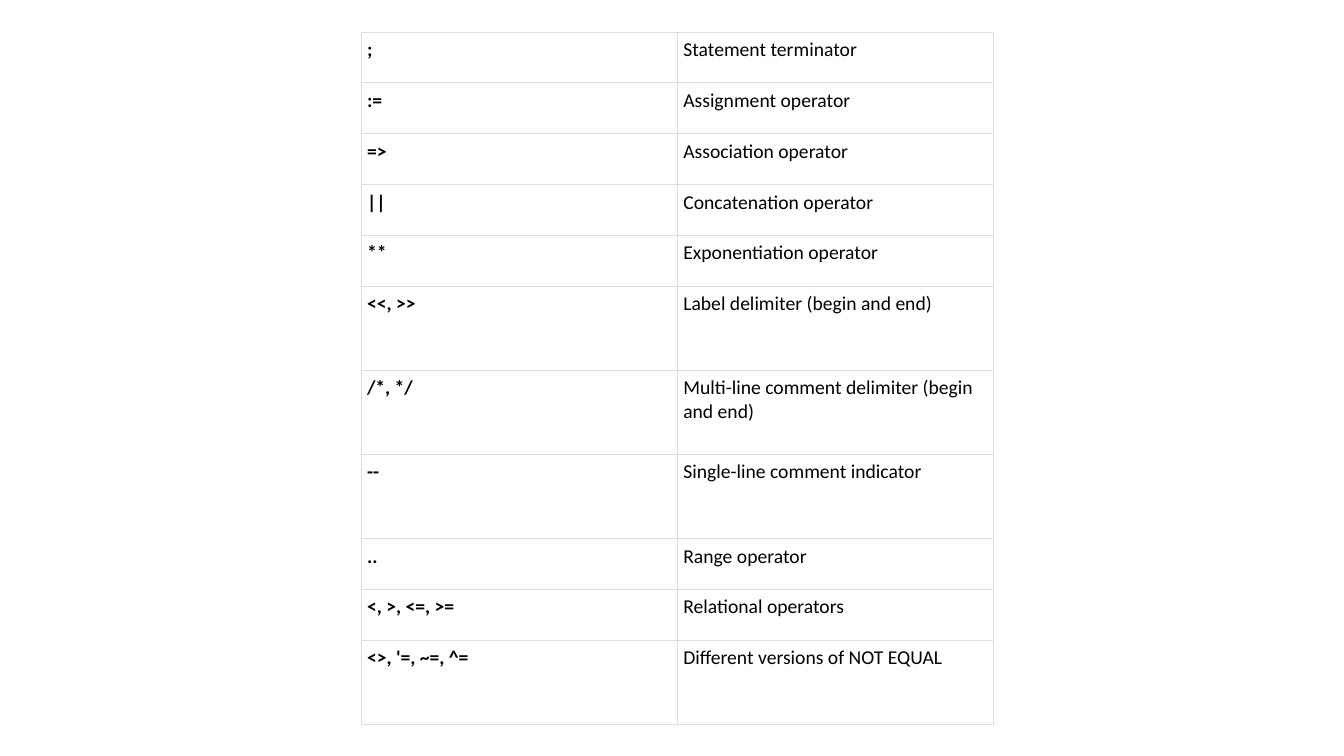
import pptx
import pptx.dml.color
import pptx.oxml
import pptx.oxml.ns
import pptx.util
from pptx.util import Cm

BLACK = pptx.dml.color.RGBColor(0x00, 0x00, 0x00)
WHITE = pptx.dml.color.RGBColor(0xFF, 0xFF, 0xFF)
BORDER_GRAY = pptx.dml.color.RGBColor(0xDD, 0xDD, 0xDD)

SHORT_ROW = Cm(1.28)
TALL_ROW = Cm(2.12)
CELL_MARGIN = Cm(0.15)

OPERATORS = [
    (";", "Statement terminator", SHORT_ROW),
    (":=", "Assignment operator", SHORT_ROW),
    ("=>", "Association operator", SHORT_ROW),
    ("||", "Concatenation operator", SHORT_ROW),
    ("**", "Exponentiation operator", SHORT_ROW),
    ("<<, >>", "Label delimiter (begin and end)", TALL_ROW),
    ("/*, */", "Multi-line comment delimiter (begin and end)", TALL_ROW),
    ("--", "Single-line comment indicator", TALL_ROW),
    ("..", "Range operator", SHORT_ROW),
    ("<, >, <=, >=", "Relational operators", SHORT_ROW),
    ("<>, '=, ~=, ^=", "Different versions of NOT EQUAL", TALL_ROW),
]


def write_text(text_frame, text, size=14, bold=False, color=BLACK, font="Calibri"):
    run = text_frame.paragraphs[0].add_run()
    run.text = text
    run.font.size = pptx.util.Pt(size)
    run.font.bold = bold
    run.font.color.rgb = color
    run.font.name = font


def set_borders(cell, color, width):
    properties = cell._tc.get_or_add_tcPr()
    for position, side in enumerate(("lnL", "lnR", "lnT", "lnB")):
        line = pptx.oxml.parse_xml(
            f'<a:{side} {pptx.oxml.ns.nsdecls("a")} w="{width}">'
            f'<a:solidFill><a:srgbClr val="{color}"/></a:solidFill></a:{side}>'
        )
        properties.insert(position, line)


def format_cell(cell):
    cell.margin_left = cell.margin_right = CELL_MARGIN
    cell.margin_top = cell.margin_bottom = CELL_MARGIN
    cell.fill.solid()
    cell.fill.fore_color.rgb = WHITE
    set_borders(cell, BORDER_GRAY, pptx.util.Pt(0.75))


def add_operator_table(slide, left, top, width):
    height = sum(row_height for _, _, row_height in OPERATORS)
    frame = slide.shapes.add_table(len(OPERATORS), 2, left, top, width, height)
    table = frame.table
    table.first_row = False
    table.horz_banding = False
    for column in table.columns:
        column.width = width // 2
    for row, (symbol, meaning, row_height) in zip(table.rows, OPERATORS):
        row.height = row_height
        symbol_cell, meaning_cell = row.cells
        write_text(symbol_cell.text_frame, symbol, bold=True)
        write_text(meaning_cell.text_frame, meaning)
        for cell in row.cells:
            format_cell(cell)


def main():
    presentation = pptx.Presentation()
    presentation.slide_width = Cm(33.87)
    presentation.slide_height = Cm(19.05)
    slide = presentation.slides.add_slide(presentation.slide_layouts[6])
    add_operator_table(slide, Cm(9.1), Cm(0.81), Cm(15.94))
    presentation.save("out.pptx")


if __name__ == "__main__":
    main()
